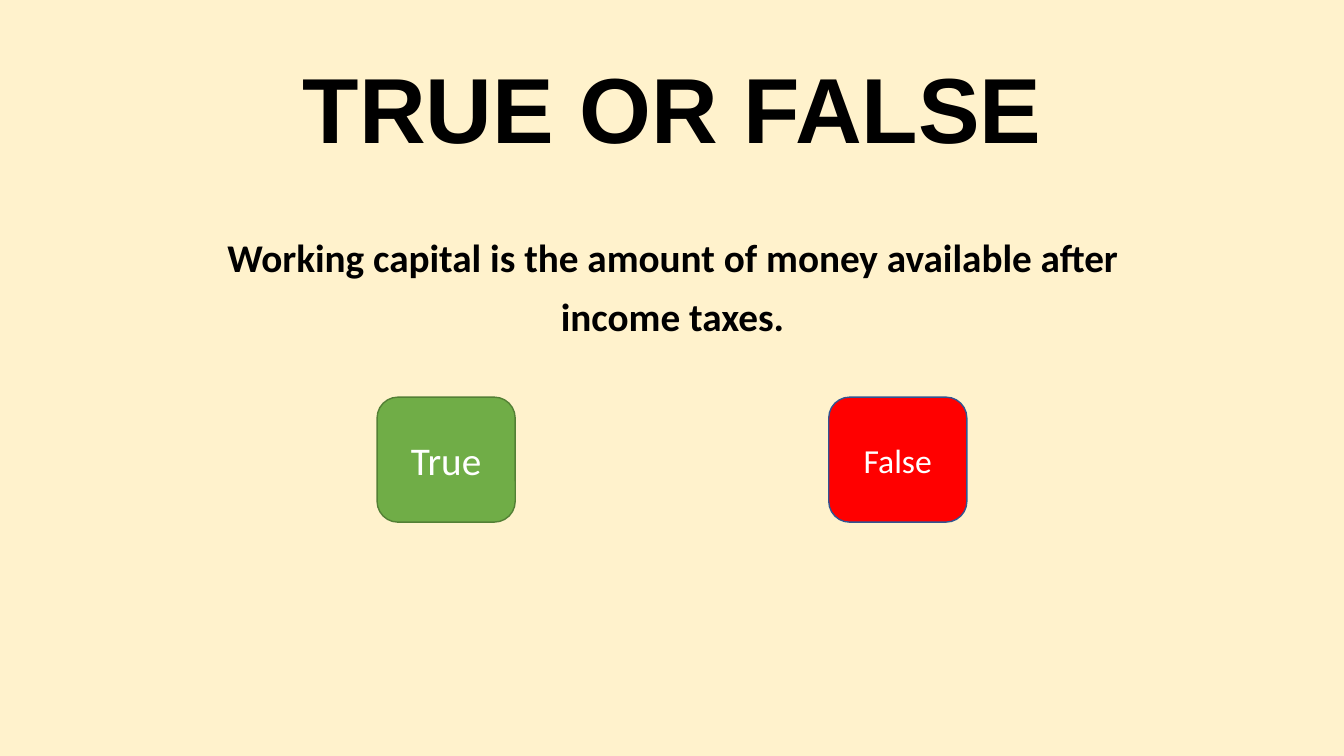
"""Build a true-or-false quiz slide with a statement and two answer buttons."""
from pptx import Presentation
from pptx import util as u
from pptx.dml import color
from pptx.enum import shapes, text

HUES = {
    "cream": "FFF2CC",
    "black": "000000",
    "white": "FFFFFF",
    "green": "70AD47",
    "moss": "538035",
    "red": "FF0000",
    "blue": "325491",
}


def hue(name):
    """Return the named colour."""
    return color.RGBColor.from_string(HUES[name])


def place(shape, *box):
    """Move a shape to left, top, width, height in inches."""
    shape.left, shape.top, shape.width, shape.height = map(u.Inches, box)


def write(shape, words, face, size, ink, bold=False):
    """Fill a shape with one centred paragraph and return it."""
    frame = shape.text_frame
    frame.word_wrap = True
    frame.text = words
    para = frame.paragraphs[0]
    para.alignment = text.PP_ALIGN.CENTER
    font = para.font
    font.name, font.size, font.bold = face, u.Pt(size), bold
    font.color.rgb = hue(ink)
    return para


def add_title(slide, words):
    """Fill the title placeholder."""
    title = slide.shapes.title
    place(title, 0.92, 0.4, 11.5, 1.45)
    title.text_frame.auto_size = text.MSO_AUTO_SIZE.NONE
    title.text_frame.vertical_anchor = text.MSO_ANCHOR.MIDDLE
    write(title, words, "Arial", 66, "black", True).line_spacing = 0.9


def add_claim(slide, words):
    """Add the statement to be judged."""
    box = slide.shapes.add_textbox(*map(u.Inches, (1.67, 2.15, 10, 1.24)))
    para = write(box, words, "Calibri", 28, "black", True)
    para.line_spacing = 1.25
    para.space_after = u.Pt(8)
    box.text_frame.auto_size = text.MSO_AUTO_SIZE.SHAPE_TO_FIT_TEXT


def add_button(group, words, left, size, fill, line):
    """Add one rounded answer button."""
    button = group.shapes.add_shape(
        shapes.MSO_SHAPE.ROUNDED_RECTANGLE,
        *map(u.Inches, (left, 3.94, 1.37, 1.24)))
    button.shadow.inherit = False
    button.fill.solid()
    button.fill.fore_color.rgb = hue(fill)
    button.line.color.rgb = hue(line)
    button.line.width = u.Pt(1)
    button.text_frame.vertical_anchor = text.MSO_ANCHOR.MIDDLE
    write(button, words, "Calibri", size, "white")


def main():
    """Build and save the slide."""
    deck = Presentation()
    deck.slide_width, deck.slide_height = u.Inches(13.33), u.Inches(7.5)
    slide = deck.slides.add_slide(deck.slide_layouts[5])
    slide.background.fill.solid()
    slide.background.fill.fore_color.rgb = hue("cream")
    add_title(slide, "TRUE OR FALSE")
    group = slide.shapes.add_group_shape()
    add_button(group, "False", 8.22, 24, "red", "blue")
    add_button(group, "True", 3.74, 28, "green", "moss")
    add_claim(slide, "Working capital is the amount of money available "
                     "after income taxes.")
    deck.save("out.pptx")


if __name__ == "__main__":
    main()
